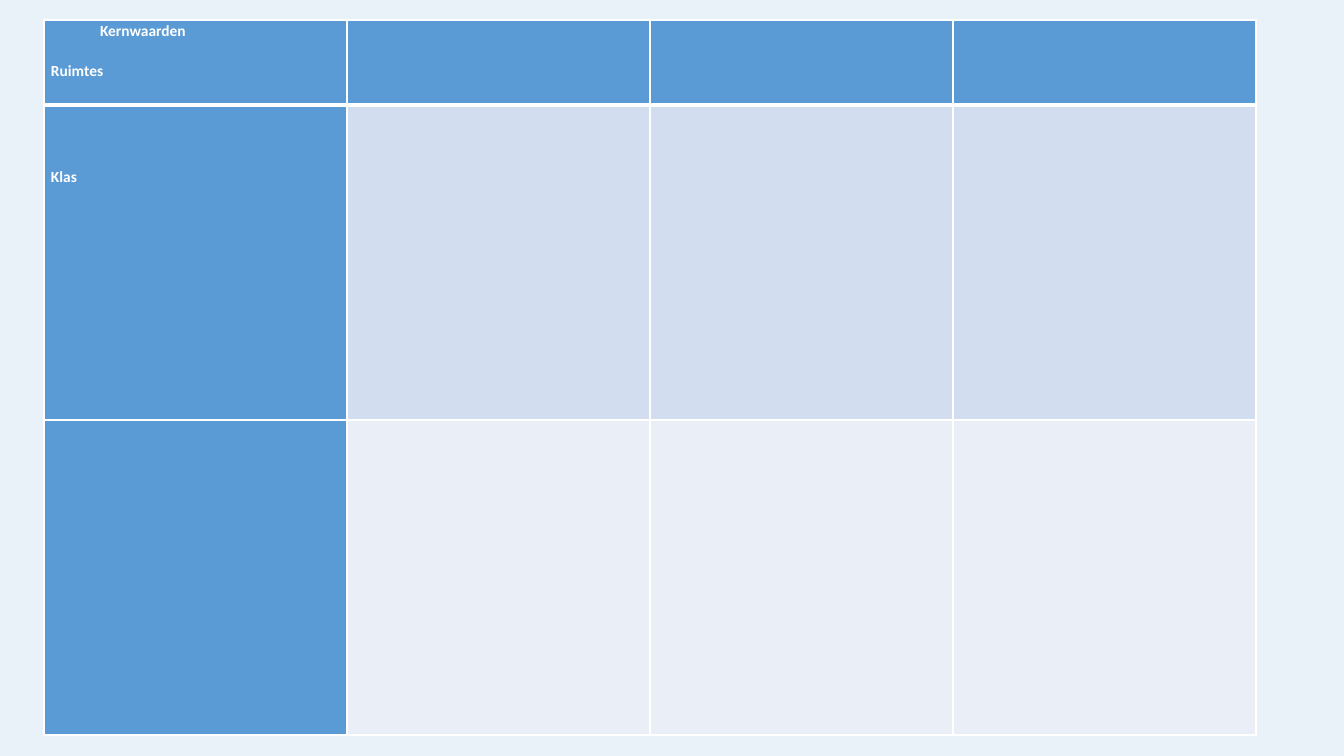
"""Build a slide with a grid of core values against rooms."""
from dataclasses import dataclass

from lxml import etree
from pptx import Presentation
from pptx.dml.color import RGBColor
from pptx.oxml.ns import qn
from pptx.util import Emu, Pt

SCALE = 914400 / 100.8
COLS = [303] * 4
ROWS = [85, 315, 315]
HEX = {"back": "E9F1F9", "head": "5B9BD5", "odd": "D2DEEF",
       "even": "EAEFF7", "white": "FFFFFF"}


@dataclass
class Line:
    text: str
    indent: int = 0
    before: float = 0


@dataclass
class Label:
    row: int
    col: int
    top: int
    lines: list[Line]


LABELS = [
    Label(0, 0, 0, [Line("Kernwaarden", indent=49), Line("Ruimtes", before=14.5)]),
    Label(1, 0, 61, [Line("Klas")]),
]


def px(num: int) -> Emu:
    return Emu(round(num * SCALE))


def color(name: str) -> RGBColor:
    return RGBColor.from_string(HEX[name])


def edge(cell, side: str, width: float) -> None:
    props = cell._tc.get_or_add_tcPr()
    line = etree.SubElement(props, qn(f"a:ln{side}"), w=str(Pt(width)))
    fill = etree.SubElement(line, qn("a:solidFill"))
    etree.SubElement(fill, qn("a:srgbClr"), val=HEX["white"])


def paint(cell, row: int, col: int) -> None:
    edge(cell, "L", 1)
    edge(cell, "R", 1)
    edge(cell, "T", 3 if row == 1 else 1)
    edge(cell, "B", 3 if row == 0 else 1)
    band = "odd" if row % 2 else "even"
    cell.fill.solid()
    cell.fill.fore_color.rgb = color("head" if row == 0 or col == 0 else band)
    cell.margin_left = cell.margin_right = px(7)
    cell.margin_top = cell.margin_bottom = 0


def write(cell, label: Label) -> None:
    cell.margin_top = px(label.top)
    frame = cell.text_frame
    frame.text = "\n".join(line.text for line in label.lines)
    for para, line in zip(frame.paragraphs, label.lines):
        para.line_spacing = 1.07
        para.space_before = Pt(line.before)
        para._p.get_or_add_pPr().set("marL", str(px(line.indent)))
        font = para.font
        font.name, font.size, font.bold = "Calibri", Pt(11), True
        font.color.rgb = color("white")


def main() -> None:
    deck = Presentation()
    deck.slide_width, deck.slide_height = px(1344), px(756)
    slide = deck.slides.add_slide(deck.slide_layouts[6])
    back = slide.background.fill
    back.solid()
    back.fore_color.rgb = color("back")
    grid = slide.shapes.add_table(len(ROWS), len(COLS), px(44), px(20),
                                  px(sum(COLS)), px(sum(ROWS))).table
    for col, width in zip(grid.columns, COLS):
        col.width = px(width)
    for row, height in zip(grid.rows, ROWS):
        row.height = px(height)
    for row in range(len(ROWS)):
        for col in range(len(COLS)):
            paint(grid.cell(row, col), row, col)
    for label in LABELS:
        write(grid.cell(label.row, label.col), label)
    deck.save("out.pptx")


if __name__ == "__main__":
    main()
